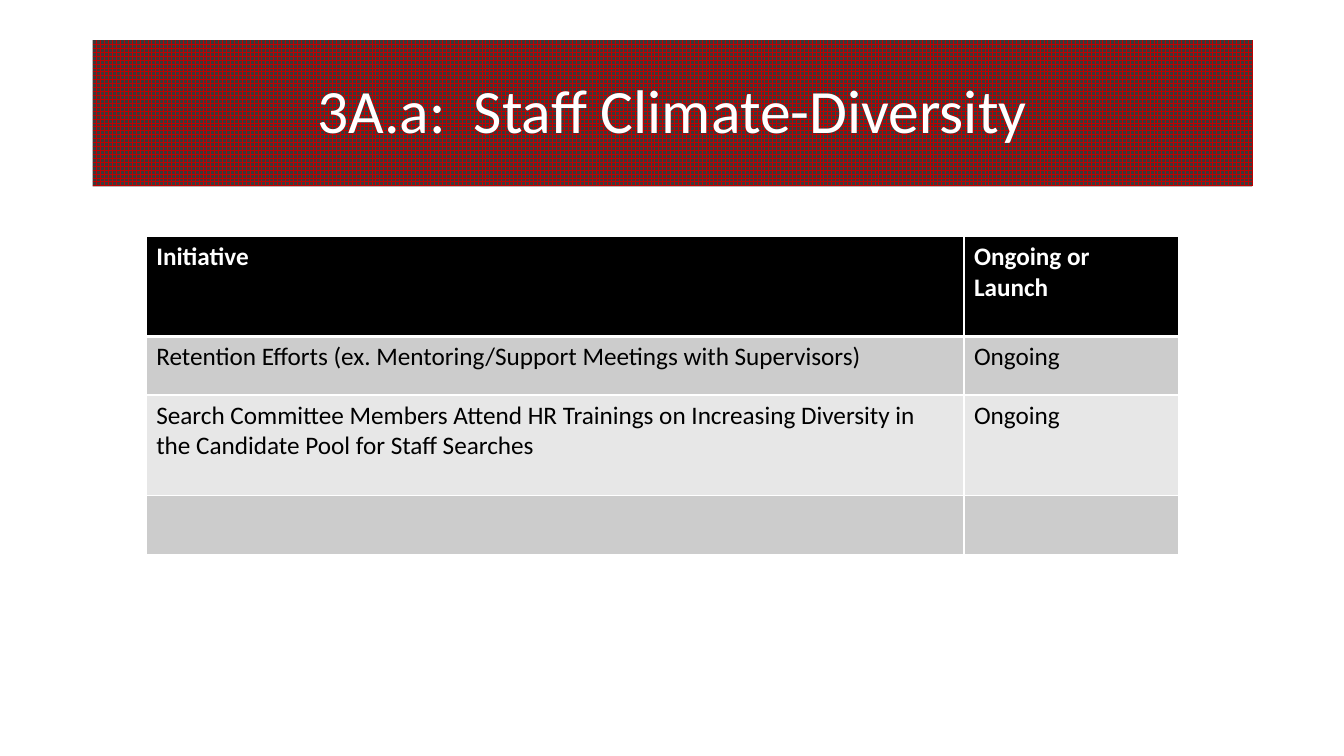
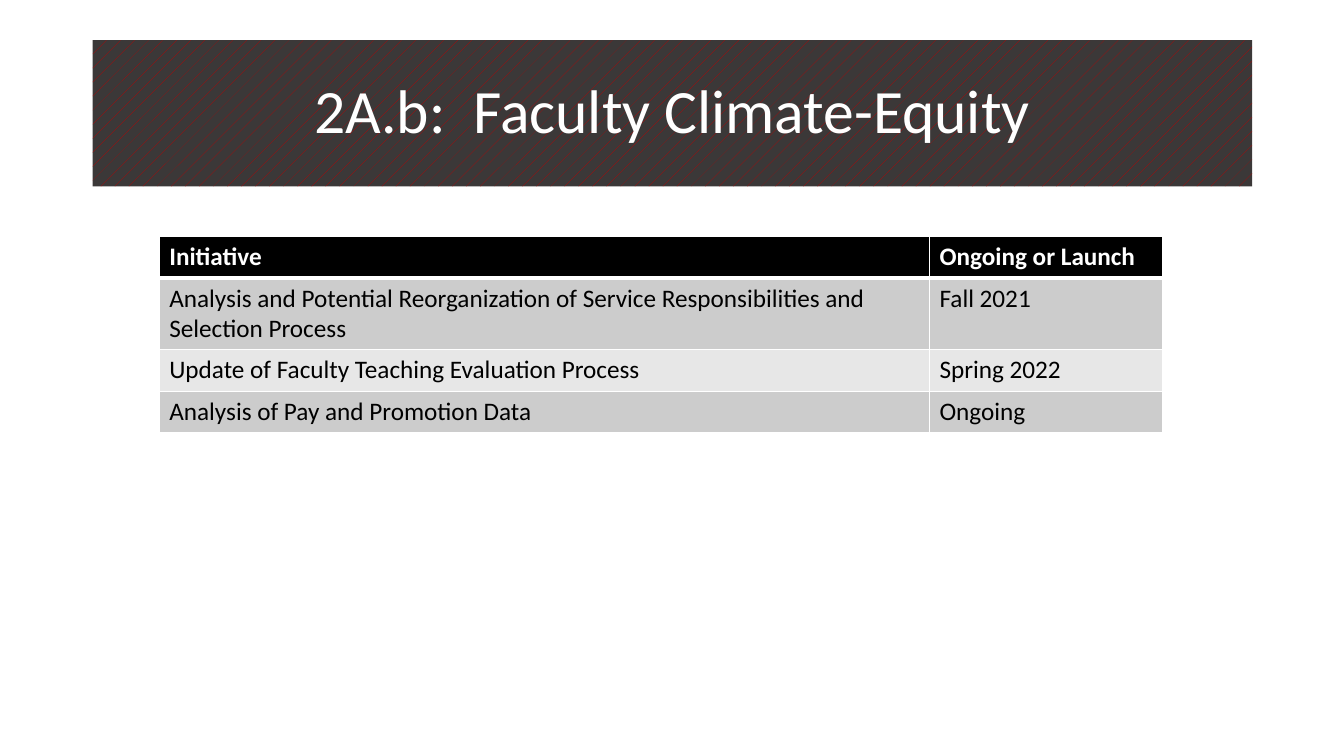
from dataclasses import dataclass
from lxml.etree import SubElement
from pptx import Presentation
from pptx.dml.color import RGBColor as Rgb
from pptx.enum.dml import MSO_PATTERN as Pat
from pptx.enum.shapes import MSO_SHAPE as Shape
from pptx.enum.text import MSO_ANCHOR as Anchor, PP_ALIGN as Align
from pptx.oxml import parse_xml
from pptx.oxml.ns import nsdecls, qn
from pptx.util import Inches, Pt


@dataclass(frozen=True)
class Theme:
    font: str = "Calibri"
    title: int = 44
    body: int = 18
    white: str = "FFFFFF"
    black: str = "000000"
    red: str = "C00000"
    dark: str = "3B3838"
    bands: tuple = ("E7E7E7", "CCCCCC")
    thin: int = 1
    thick: int = 3


theme = Theme()


def write(frame, text, size=theme.body, color=theme.black, bold=False,
          align=Align.LEFT, lead=1.0, anchor=Anchor.TOP):
    frame.word_wrap = True
    frame.vertical_anchor = anchor
    para = frame.paragraphs[0]
    para.alignment, para.line_spacing = align, lead
    run = para.add_run()
    run.text = text
    font = run.font
    font.name, font.size, font.bold = theme.font, Pt(size), bold
    font.color.rgb = Rgb.from_string(color)


def rule(cell, top, bottom):
    """Draw the white lines around a cell, with widths in points."""
    sides = {"L": theme.thin, "R": theme.thin, "T": top, "B": bottom}
    props = cell._tc.get_or_add_tcPr()
    for i, (side, width) in enumerate(sides.items()):
        line = parse_xml(f'<a:ln{side} {nsdecls("a")} w="{Pt(width)}"/>')
        fill = SubElement(line, qn("a:solidFill"))
        SubElement(fill, qn("a:srgbClr"), val=theme.white)
        props.insert(i, line)


# Slide size, and a grid of 100 columns by 100 rows
deck = Presentation()
deck.slide_width, deck.slide_height = Inches(13.33), Inches(7.5)
col, row = deck.slide_width / 100, deck.slide_height / 100

# Content: title, pattern, table left, column widths, row heights, cells
head = ("Initiative", "Ongoing or Launch")
pages = [
    ("3A.a:  Staff Climate-Diversity", Pat.LARGE_GRID,
     10.88, (60.84, 15.98), (13.2, 7.73, 13.33, 7.73),
     [head,
      ("Retention Efforts (ex. Mentoring/Support Meetings with Supervisors)",
       "Ongoing"),
      ("Search Committee Members Attend HR Trainings on Increasing Diversity "
       "in the Candidate Pool for Staff Searches", "Ongoing"),
      ("", "")]),
    ("2A.b:  Faculty Climate-Equity", Pat.PERCENT_5,
     11.85, (57.31, 17.33), (5.47, 9.33, 5.47, 5.47),
     [head,
      ("Analysis and Potential Reorganization of Service Responsibilities "
       "and Selection Process", "Fall 2021"),
      ("Update of Faculty Teaching Evaluation Process", "Spring 2022"),
      ("Analysis of Pay and Promotion Data", "Ongoing")]),
]

for title, weave, left, widths, heights, cells in pages:
    slide = deck.slides.add_slide(deck.slide_layouts[6])

    # Title band
    band = slide.shapes.add_shape(
        Shape.RECTANGLE, int(6.9 * col), int(5.33 * row),
        int(86.27 * col), int(19.33 * row))
    band.shadow.inherit = False
    band.line.fill.background()
    band.fill.patterned()
    band.fill.pattern = weave
    band.fill.fore_color.rgb = Rgb.from_string(theme.red)
    band.fill.back_color.rgb = Rgb.from_string(theme.dark)
    write(band.text_frame, title, size=theme.title, color=theme.white,
          align=Align.CENTER, lead=0.9, anchor=Anchor.MIDDLE)

    # Table of initiatives
    grid = slide.shapes.add_table(
        len(heights), len(widths), int(left * col), int(31.33 * row),
        int(sum(widths) * col), int(sum(heights) * row)).table
    for c, width in enumerate(widths):
        grid.columns[c].width = int(width * col)
    for r, height in enumerate(heights):
        grid.rows[r].height = int(height * row)
        first = r == 0
        for c, text in enumerate(cells[r]):
            cell = grid.cell(r, c)
            cell.fill.solid()
            cell.fill.fore_color.rgb = Rgb.from_string(
                theme.black if first else theme.bands[r % 2])
            rule(cell, top=theme.thick if r == 1 else theme.thin,
                 bottom=theme.thick if first else theme.thin)
            if text:
                write(cell.text_frame, text, bold=first,
                      color=theme.white if first else theme.black)

deck.save("out.pptx")
